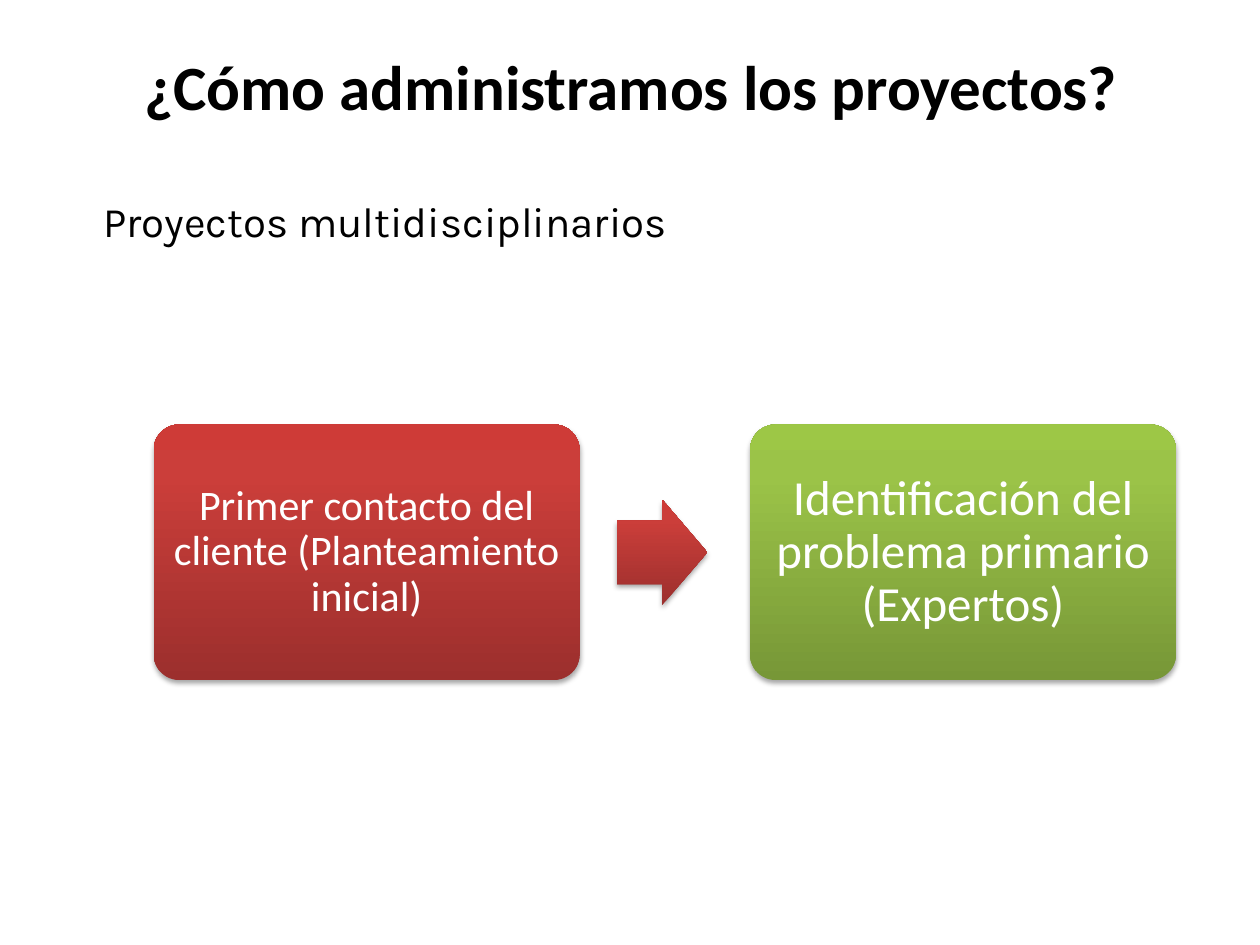
from copy import deepcopy

from lxml import etree
from pptx import Presentation
from pptx.dml.color import RGBColor
from pptx.enum.shapes import MSO_SHAPE
from pptx.enum.text import MSO_ANCHOR, PP_ALIGN
from pptx.oxml.ns import qn
from pptx.util import Pt

ROUNDED, ARROW = MSO_SHAPE.ROUNDED_RECTANGLE, MSO_SHAPE.RIGHT_ARROW
MIDDLE, CENTER, LEFT = MSO_ANCHOR.MIDDLE, PP_ALIGN.CENTER, PP_ALIGN.LEFT

TITLE = "¿Cómo administramos los proyectos?"
SUBTITLE = "Proyectos multidisciplinarios"
STEPS = [
    {"text": "Primer contacto del cliente (Planteamiento inicial)",
     "gradient": "red", "format": "step_small", "inset": 7.2},
    {"text": "Identificación del problema primario (Expertos)",
     "gradient": "green", "format": "step_large", "inset": 8.4},
]

BLACK, WHITE = RGBColor(0, 0, 0), RGBColor(255, 255, 255)
THEME = {
    "title": {"name": "Calibri", "size": Pt(36), "bold": True, "color": BLACK},
    "subtitle": {"name": "Karla", "size": Pt(24), "color": BLACK},
    "step_small": {"name": "Calibri", "size": Pt(24), "color": WHITE},
    "step_large": {"name": "Calibri", "size": Pt(28), "color": WHITE},
    "red": [(0, "9C2F2D"), (0.8, "CB3E3A"), (1, "CE3B37")],
    "green": [(0, "779737"), (0.8, "9BC348"), (1, "9DC746")],
}

TITLE_AREA = (0.7, -2.2, 720, 102.2)
SUBTITLE_AREA = (51.8, 108, 648, 42.5)
HANGING = Pt(27)
FLOW_LEFT, FLOW_TOP = 87.8, 242.6
STEP_WIDTH = 243.4
STEP_HEIGHT = STEP_WIDTH * 0.6
STEP_PITCH = STEP_WIDTH * 1.4
ARROW_OFFSET = STEP_WIDTH * 1.088
ARROW_WIDTH, ARROW_HEIGHT = STEP_WIDTH * 0.212, STEP_WIDTH * 0.248


def write(para, text, style, align):
    para.alignment = align
    span = para.add_run()
    span.text = text
    for key, value in style.items():
        if key == "color":
            span.font.color.rgb = value
        else:
            setattr(span.font, key, value)


def place(box, area):
    box.left, box.top, box.width, box.height = (Pt(value) for value in area)


def paint_gradient(box, stops):
    box.fill.gradient()
    box.fill.gradient_angle = 90
    stop_list = box.fill._fill._gradFill.gsLst
    stop_list.append(deepcopy(stop_list[-1]))
    for stop, (position, color) in zip(box.fill.gradient_stops, stops):
        stop.position = position
        stop.color.rgb = RGBColor.from_string(color)


def cast_shadow(box):
    box.shadow.inherit = False
    effects = box._element.spPr.find(qn("a:effectLst"))
    shadow = etree.SubElement(effects, qn("a:outerShdw"), blurRad=str(Pt(3.1)),
                              dist=str(Pt(1.8)), dir="5400000", rotWithShape="0")
    color = etree.SubElement(shadow, qn("a:srgbClr"), val="000000")
    etree.SubElement(color, qn("a:alpha"), val="35000")


def add_block(page, kind, area, adjustments, gradient):
    box = page.shapes.add_shape(kind, *(Pt(value) for value in area))
    for index, value in enumerate(adjustments):
        box.adjustments[index] = value
    paint_gradient(box, THEME[gradient])
    box.line.fill.background()
    cast_shadow(box)
    return box


def add_step(page, step, left):
    box = add_block(page, ROUNDED, (left, FLOW_TOP, STEP_WIDTH, STEP_HEIGHT),
                    [0.1], step["gradient"])
    frame = box.text_frame
    frame.word_wrap = True
    frame.vertical_anchor = MIDDLE
    for side in ("left", "top", "right", "bottom"):
        setattr(frame, f"margin_{side}", Pt(step["inset"]))
    para = frame.paragraphs[0]
    para.line_spacing = 0.9
    write(para, step["text"], THEME[step["format"]], CENTER)


def add_arrow(page, left, gradient):
    top = FLOW_TOP + (STEP_HEIGHT - ARROW_HEIGHT) / 2
    add_block(page, ARROW, (left, top, ARROW_WIDTH, ARROW_HEIGHT),
              [0.6, 0.5], gradient)


def main():
    deck = Presentation()
    deck.slide_width, deck.slide_height = Pt(720), Pt(540)
    page = deck.slides.add_slide(deck.slide_layouts[1])

    title = page.shapes.title
    place(title, TITLE_AREA)
    title.text_frame.vertical_anchor = MIDDLE
    write(title.text_frame.paragraphs[0], TITLE, THEME["title"], CENTER)

    body = page.placeholders[1]
    place(body, SUBTITLE_AREA)
    para = body.text_frame.paragraphs[0]
    properties = para._p.get_or_add_pPr()
    properties.set("marL", str(HANGING))
    properties.set("indent", str(-HANGING))
    etree.SubElement(properties, qn("a:buNone"))
    para.space_before = Pt(0)
    write(para, SUBTITLE, THEME["subtitle"], LEFT)

    for index, step in enumerate(STEPS):
        left = FLOW_LEFT + index * STEP_PITCH
        add_step(page, step, left)
        if index < len(STEPS) - 1:
            add_arrow(page, left + ARROW_OFFSET, step["gradient"])

    deck.save("out.pptx")


if __name__ == "__main__":
    main()
